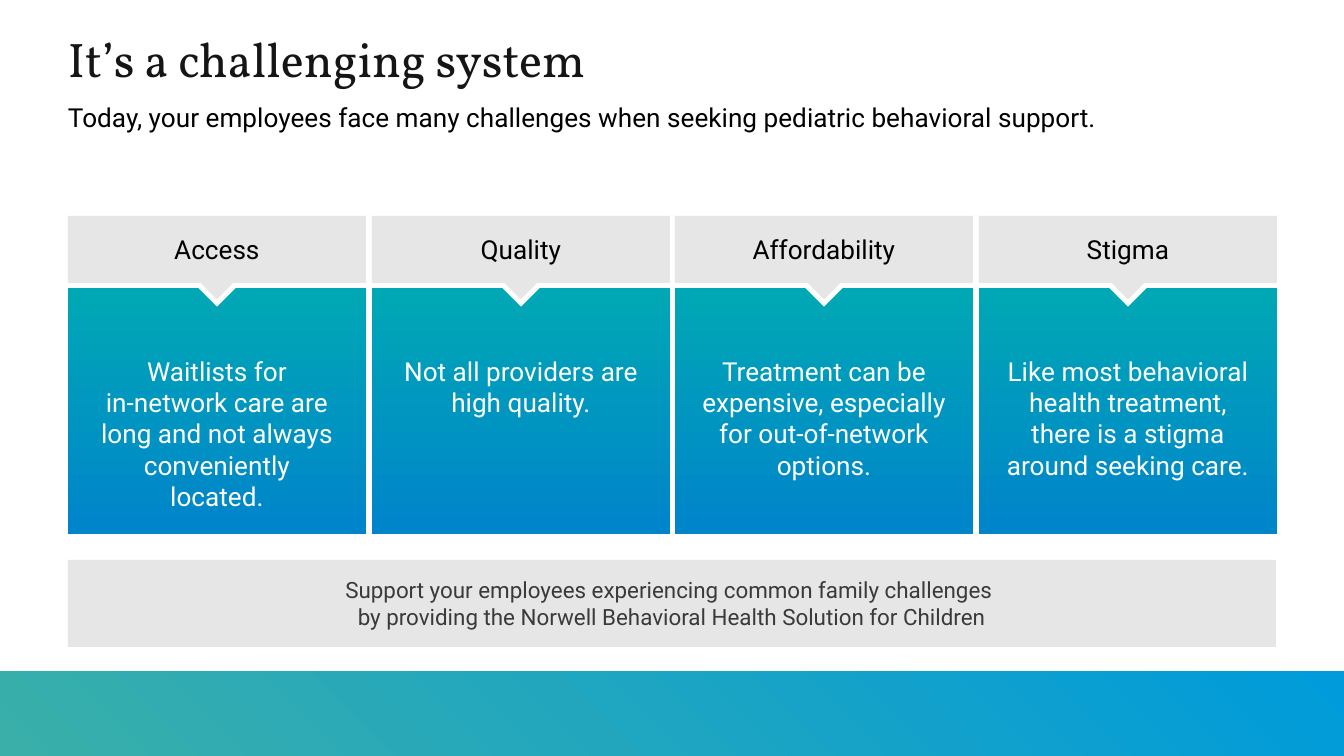
from dataclasses import dataclass

from pptx import Presentation
from pptx import util as u
from pptx.dml.color import RGBColor
from pptx.enum import shapes, text

EMU_PER_PX = 914400 / 134.4
SLIDE_W, SLIDE_H = 1344, 756
LEFT, CONTENT_W = 68, 1208
CARD_W, CARD_SPAN = 298, 911
HEAD_TOP, HEAD_H = 216, 67
BODY_TOP, BODY_H = 288, 246
GREY, WHITE, BLACK = "E6E6E6", "FFFFFF", "000000"
ANCHOR, ALIGN = text.MSO_ANCHOR, text.PP_ALIGN


@dataclass(frozen=True)
class Box:
    left: int
    top: int
    width: int
    height: int


@dataclass(frozen=True)
class Gradient:
    start: str
    end: str
    angle: int
    end_position: float = 1.0


@dataclass(frozen=True)
class Style:
    size: int
    colour: str
    font: str = "Roboto"
    align: text.PP_ALIGN = ALIGN.CENTER
    anchor: text.MSO_ANCHOR = ANCHOR.MIDDLE
    insets: tuple[int, int, int, int] = (13, 7, 13, 7)


@dataclass(frozen=True)
class Card:
    heading: str
    detail: str


@dataclass(frozen=True)
class Pointer:
    size: int
    centre_y: int
    colour: str


TITLE = Style(26, "151515", "Vollkorn", ALIGN.LEFT, ANCHOR.BOTTOM, (0, 7, 13, 0))
SUBTITLE = Style(14, BLACK, align=ALIGN.LEFT, anchor=ANCHOR.TOP, insets=(0, 7, 13, 7))
HEADING = Style(14, BLACK)
DETAIL = Style(14, WHITE, anchor=ANCHOR.TOP, insets=(27, 67, 27, 0))
MESSAGE = Style(12, "3A3A3A")

CARD_FILL = Gradient("00A7B5", "0085CA", 270, 0.99)
FOOTER_FILL = Gradient("009BDB", "3AAFA9", 45)
POINTER_EDGE = Pointer(32, 284, WHITE)
POINTER_TIP = Pointer(26, 281, GREY)

CARDS = [
    Card("Access", "Waitlists for\nin-network care are long and not always conveniently located."),
    Card("Quality", "Not all providers are high quality."),
    Card("Affordability", "Treatment can be expensive, especially for out-of-network options."),
    Card("Stigma", "Like most behavioral health treatment, there is a stigma around seeking care."),
]


def px(length: int) -> u.Emu:
    return u.Emu(round(length * EMU_PER_PX))


def rgb(colour: str) -> RGBColor:
    return RGBColor.from_string(colour)


def place(box: Box) -> tuple[u.Emu, ...]:
    return px(box.left), px(box.top), px(box.width), px(box.height)


def write(shape, words: str, style: Style) -> None:
    frame = shape.text_frame
    left, top, right, bottom = map(px, style.insets)
    frame_format = {
        "word_wrap": True,
        "vertical_anchor": style.anchor,
        "margin_left": left,
        "margin_top": top,
        "margin_right": right,
        "margin_bottom": bottom,
    }
    for name, value in frame_format.items():
        setattr(frame, name, value)
    para = frame.paragraphs[0]
    para.text = words.replace("\n", "\v")
    para.alignment = style.align
    for span in para.runs:
        for name, value in {"name": style.font, "size": u.Pt(style.size)}.items():
            setattr(span.font, name, value)
        span.font.color.rgb = rgb(style.colour)


def add_text(page, box: Box, words: str, style: Style) -> None:
    write(page.shapes.add_textbox(*place(box)), words, style)


def add_rect(page, box: Box, fill: str | Gradient, rotation: int = 0):
    rect = page.shapes.add_shape(shapes.MSO_SHAPE.RECTANGLE, *place(box))
    rect.shadow.inherit = False
    rect.line.fill.background()
    rect.rotation = rotation
    if isinstance(fill, Gradient):
        rect.fill.gradient()
        rect.fill.gradient_angle = fill.angle
        first, last = rect.fill.gradient_stops
        first.color.rgb, first.position = rgb(fill.start), 0.0
        last.color.rgb, last.position = rgb(fill.end), fill.end_position
    else:
        rect.fill.solid()
        rect.fill.fore_color.rgb = rgb(fill)
    return rect


def add_pointer(page, centre_x: int, pointer: Pointer) -> None:
    half = pointer.size // 2
    box = Box(centre_x - half, pointer.centre_y - half, pointer.size, pointer.size)
    add_rect(page, box, pointer.colour, 45)


def add_card(page, left: int, card: Card) -> None:
    centre_x = left + CARD_W // 2
    body = add_rect(page, Box(left, BODY_TOP, CARD_W, BODY_H), CARD_FILL)
    write(body, card.detail, DETAIL)
    add_pointer(page, centre_x, POINTER_EDGE)
    head = add_rect(page, Box(left, HEAD_TOP, CARD_W, HEAD_H), GREY)
    write(head, card.heading, HEADING)
    add_pointer(page, centre_x, POINTER_TIP)


def main() -> None:
    deck = Presentation()
    deck.slide_width, deck.slide_height = px(SLIDE_W), px(SLIDE_H)
    page = deck.slides.add_slide(deck.slide_layouts[6])

    add_rect(page, Box(0, 671, SLIDE_W, SLIDE_H - 671), FOOTER_FILL, 180)
    add_text(page, Box(LEFT, 0, 1248, 87), "It’s a challenging system", TITLE)
    add_text(
        page,
        Box(LEFT, 94, CONTENT_W, 67),
        "Today, your employees face many challenges when seeking pediatric behavioral support.",
        SUBTITLE,
    )
    banner = add_rect(page, Box(LEFT, 560, CONTENT_W, 87), GREY)
    write(
        banner,
        "Support your employees experiencing common family challenges \n"
        "by providing the Norwell Behavioral Health Solution for Children",
        MESSAGE,
    )
    for index, card in enumerate(CARDS):
        add_card(page, LEFT + round(index * CARD_SPAN / (len(CARDS) - 1)), card)

    deck.save("out.pptx")


if __name__ == "__main__":
    main()
